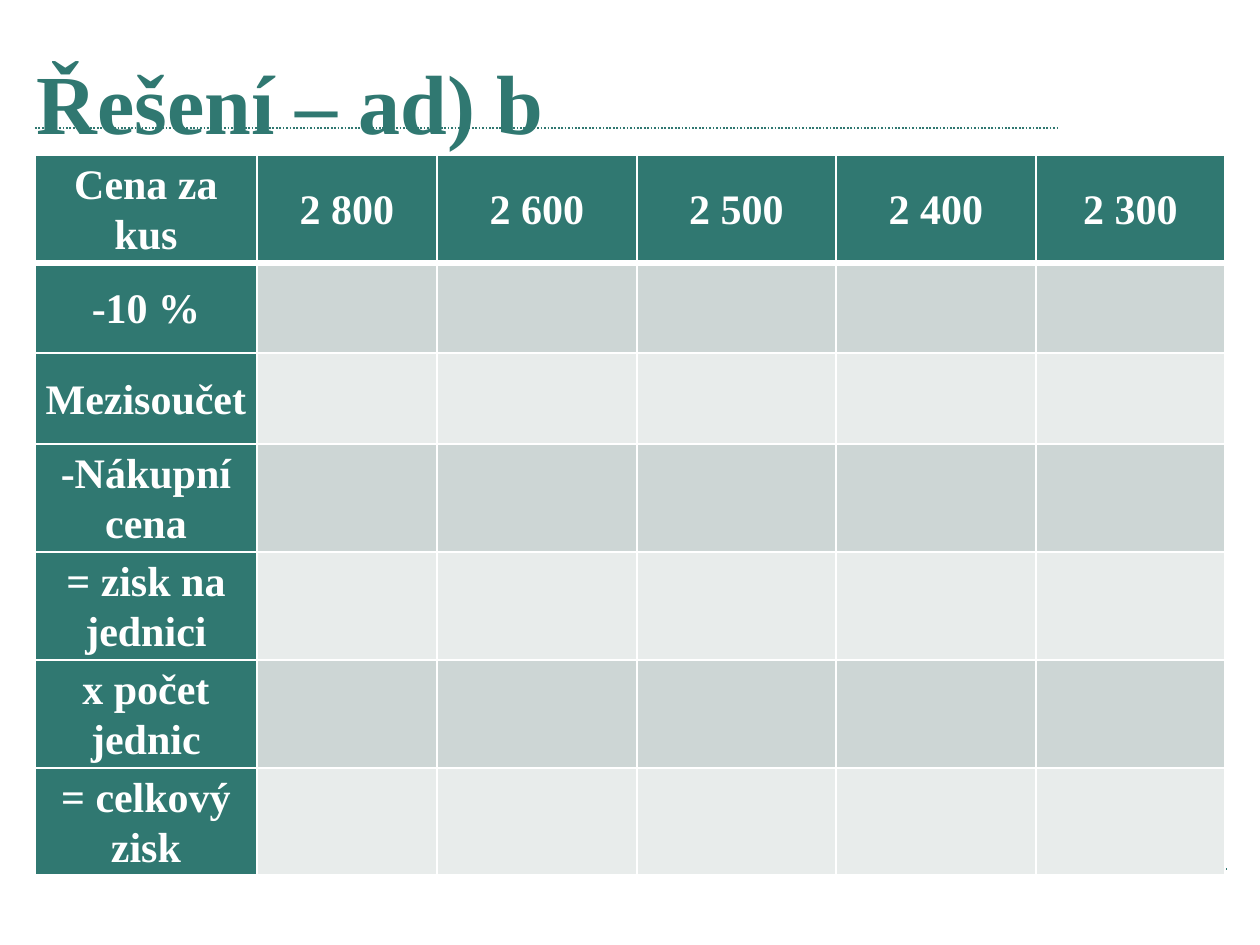
from lxml import etree
from pptx import Presentation
from pptx.dml.color import RGBColor
from pptx.enum.dml import MSO_LINE
from pptx.enum.shapes import MSO_CONNECTOR
from pptx.enum.text import MSO_ANCHOR, PP_ALIGN
from pptx.oxml.ns import qn
from pptx.util import Pt

PX = 914400 // 168
TEAL, WHITE = "307871", "FFFFFF"
BANDS = ["CDD6D5", "E8ECEB"]
STRAIGHT = MSO_CONNECTOR.STRAIGHT
DOTTED = MSO_LINE.ROUND_DOT
MIDDLE, TOP = MSO_ANCHOR.MIDDLE, MSO_ANCHOR.TOP
CENTER, LEFT = PP_ALIGN.CENTER, PP_ALIGN.LEFT

PRICES = ["2 800", "2 600", "2 500", "2 400", "2 300"]
LABELS = ["Cena za kus", "-10 %", "Mezisoučet", "-Nákupní cena",
          "= zisk na jednici", "x počet jednic", "= celkový zisk"]
COL_WIDTHS = [222, 180, 200, 199, 200, 189]
ROW_HEIGHTS = [100, 90, 91, 100, 103, 99, 99]


def rgb(value):
    return RGBColor.from_string(value)


def write(tf, text, size, color, align=LEFT, spacing=1.0):
    p = tf.paragraphs[0]
    p.alignment = align
    p.line_spacing = spacing
    r = p.add_run()
    r.text = text
    r.font.name = "Times New Roman"
    r.font.size = Pt(size)
    r.font.bold = True
    r.font.color.rgb = rgb(color)


prs = Presentation()
prs.slide_width = 1260 * PX
prs.slide_height = 945 * PX
s = prs.slides.add_slide(prs.slide_layouts[6])

for right, y in [(1057, 128), (1227, 869)]:
    rule = s.shapes.add_connector(STRAIGHT, 35 * PX, y * PX, right * PX, y * PX)
    rule.line.color.rgb = rgb(TEAL)
    rule.line.width = Pt(0.75)
    rule.line.dash_style = DOTTED
    etree.SubElement(rule.element.spPr, qn("a:effectLst"))

title = s.shapes.add_textbox(22 * PX, 35 * PX, 1110 * PX, 99 * PX)
tf = title.text_frame
tf.word_wrap = True
tf.vertical_anchor = TOP
tf.margin_left = tf.margin_right = tf.margin_top = 15 * PX
tf.margin_bottom = 0
write(tf, "Řešení – ad) b", 36, TEAL)

frame = s.shapes.add_table(len(LABELS), len(COL_WIDTHS), 35 * PX, 155 * PX,
                           sum(COL_WIDTHS) * PX, sum(ROW_HEIGHTS) * PX)
table = frame.table
for col, width in zip(table.columns, COL_WIDTHS):
    col.width = width * PX
for row, height in zip(table.rows, ROW_HEIGHTS):
    row.height = height * PX

for i, label in enumerate(LABELS):
    texts = [label] + (PRICES if i == 0 else [""] * len(PRICES))
    for j, text in enumerate(texts):
        cell = table.cell(i, j)
        cell.vertical_anchor = MIDDLE
        cell.margin_left = cell.margin_right = 10 * PX
        cell.margin_top = cell.margin_bottom = 0
        if text:
            write(cell.text_frame, text, 18, WHITE, CENTER, 1.07)
        tcPr = cell._tc.get_or_add_tcPr()
        for side in "LRTB":
            thick = (i, side) in [(0, "B"), (1, "T")]
            ln = etree.SubElement(tcPr, qn("a:ln" + side), w=str(Pt(3 if thick else 1)))
            fill = etree.SubElement(ln, qn("a:solidFill"))
            etree.SubElement(fill, qn("a:srgbClr"), val=WHITE)
        cell.fill.solid()
        cell.fill.fore_color.rgb = rgb(TEAL if i == 0 or j == 0 else BANDS[(i - 1) % 2])

prs.save("out.pptx")
